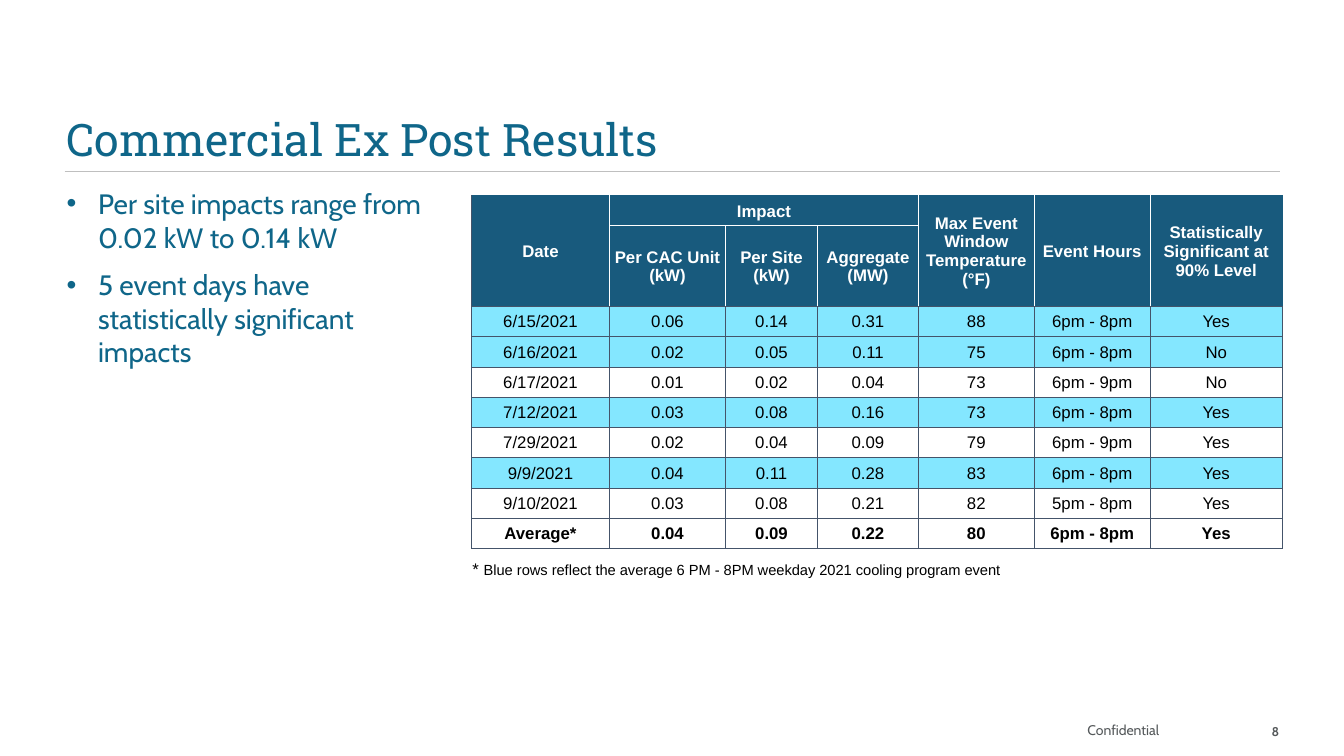
from itertools import product

from lxml.etree import SubElement
from pptx import Presentation
from pptx.dml.color import RGBColor
from pptx.enum.shapes import MSO_CONNECTOR
from pptx.enum.text import MSO_ANCHOR, MSO_AUTO_SIZE, PP_ALIGN
from pptx.oxml.ns import qn
from pptx.util import Pt

COLORS = {
    "title": "0F6689",
    "header": "185A7D",
    "event": "84E7FF",
    "white": "FFFFFF",
    "black": "000000",
    "grid": "44546A",
    "rule": "BFBFBF",
    "footer": "54585A",
}
COLUMN_WIDTHS = [98.6, 82.8, 65.8, 72, 82.8, 82.8, 94.3]
ROW_HEIGHT = 21.6
UNITS_ROW_HEIGHT = 57.6
HEADERS = [
    ["Date", "Impact", "", "", "Max Event Window Temperature (°F)",
     "Event Hours", "Statistically Significant at 90% Level"],
    ["", "Per CAC Unit (kW)", "Per Site (kW)", "Aggregate (MW)", "", "", ""],
]
RESULTS = [
    ["6/15/2021", "0.06", "0.14", "0.31", "88", "6pm - 8pm", "Yes"],
    ["6/16/2021", "0.02", "0.05", "0.11", "75", "6pm - 8pm", "No"],
    ["6/17/2021", "0.01", "0.02", "0.04", "73", "6pm - 9pm", "No"],
    ["7/12/2021", "0.03", "0.08", "0.16", "73", "6pm - 8pm", "Yes"],
    ["7/29/2021", "0.02", "0.04", "0.09", "79", "6pm - 9pm", "Yes"],
    ["9/9/2021", "0.04", "0.11", "0.28", "83", "6pm - 8pm", "Yes"],
    ["9/10/2021", "0.03", "0.08", "0.21", "82", "5pm - 8pm", "Yes"],
    ["Average*", "0.04", "0.09", "0.22", "80", "6pm - 8pm", "Yes"],
]
FOOTNOTE = "Blue rows reflect the average 6 PM - 8PM weekday 2021 cooling program event"
BULLETS = [
    "Per site impacts range from 0.02 kW to 0.14 kW",
    "5 event days have statistically significant impacts",
]


def color(name):
    return RGBColor.from_string(COLORS[name])


def style_font(font, family, size, color_name, bold=False):
    font.name = family
    font.size = Pt(size)
    font.bold = bold
    font.color.rgb = color(color_name)


def place(shape, box):
    shape.left, shape.top, shape.width, shape.height = [Pt(length) for length in box]


def set_frame(frame, insets, anchor):
    frame.word_wrap = True
    frame.auto_size = MSO_AUTO_SIZE.NONE
    frame.vertical_anchor = anchor
    (frame.margin_left, frame.margin_top,
     frame.margin_right, frame.margin_bottom) = [Pt(inset) for inset in insets]


def add_title(slide, box):
    title = slide.shapes.title
    place(title, box)
    frame = title.text_frame
    set_frame(frame, (0, 3.6, 108, 3.6), MSO_ANCHOR.BOTTOM)
    frame.text = "Commercial Ex Post Results"
    para = frame.paragraphs[0]
    para.alignment = PP_ALIGN.LEFT
    para.line_spacing = 0.9
    style_font(para.font, "Roboto Slab", 32, "title")

    left, top, width, height = box
    rule_y = Pt(top + height)
    rule = slide.shapes.add_connector(
        MSO_CONNECTOR.STRAIGHT, Pt(left - 1.4), rule_y, Pt(left + width + 2.2), rule_y)
    rule.line.color.rgb = color("rule")
    rule.line.width = Pt(1)
    SubElement(rule.element.spPr, qn("a:effectLst"))


def add_bullets(slide, box):
    body = slide.placeholders[1]
    place(body, box)
    frame = body.text_frame
    set_frame(frame, (0, 3.6, 7.2, 3.6), MSO_ANCHOR.TOP)
    frame.text = "\n".join(BULLETS)
    for index, para in enumerate(frame.paragraphs):
        para.space_before = Pt(10 if index else 0)
        properties = para._p.get_or_add_pPr()
        properties.set("marL", str(Pt(22.5)))
        properties.set("indent", str(Pt(-22.5)))
        SubElement(properties, qn("a:buFont"), typeface="Arial")
        SubElement(properties, qn("a:buChar"), char="•")
        style_font(para.font, "Cabin", 20, "title")


def set_borders(cell, sides):
    properties = cell._tc.get_or_add_tcPr()
    for side in "LRTB":
        line = SubElement(properties, qn(f"a:ln{side}"), w=str(Pt(0.5)))
        if side in sides:
            fill = SubElement(line, qn("a:solidFill"))
            SubElement(fill, qn("a:srgbClr"), val=COLORS[sides[side]])
        else:
            SubElement(line, qn("a:noFill"))


def format_cell(cell, text, sides, fill, font_color, bold=False):
    set_borders(cell, sides)
    if fill:
        cell.fill.solid()
        cell.fill.fore_color.rgb = color(fill)
    else:
        cell.fill.background()
    cell.margin_left = cell.margin_top = cell.margin_right = Pt(0.7)
    cell.margin_bottom = 0
    cell.vertical_anchor = MSO_ANCHOR.MIDDLE
    cell.text = text
    para = cell.text_frame.paragraphs[0]
    para.alignment = PP_ALIGN.CENTER
    style_font(para.font, "Arial", 12, font_color, bold)


def fill_headers(table):
    last = len(COLUMN_WIDTHS) - 1
    for row, column in product(range(2), range(last + 1)):
        units = 1 <= column <= 3
        sides = {
            "L": "white" if column else "grid",
            "R": "white" if column < last else "header",
            "T": "white" if row and units else "header",
            "B": "white" if units and not row else "grid",
        }
        format_cell(table.cell(row, column), HEADERS[row][column],
                    sides, "header", "white", True)
    table.cell(0, 1).merge(table.cell(0, 3))
    for column in (0, 4, 5, 6):
        table.cell(0, column).merge(table.cell(1, column))


def fill_results(table):
    sides = dict.fromkeys("LRTB", "grid")
    for row, values in enumerate(RESULTS, 2):
        average = values[0] == "Average*"
        blue = values[5] == "6pm - 8pm" and not average
        for column, value in enumerate(values):
            format_cell(table.cell(row, column), value, sides,
                        "event" if blue else "white", "black", average)


def fill_footnote(table):
    row = len(table.rows) - 1
    for column in range(len(COLUMN_WIDTHS)):
        format_cell(table.cell(row, column), "", {"T": "grid"}, None, "black")
    note = table.cell(row, 0)
    note.merge(table.cell(row, 4))
    note.vertical_anchor = MSO_ANCHOR.BOTTOM
    para = note.text_frame.paragraphs[0]
    para.alignment = PP_ALIGN.LEFT
    para.add_run().text = "* "
    span = para.add_run()
    span.text = FOOTNOTE
    span.font.size = Pt(10.5)


def add_results_table(slide, left, top):
    heights = [ROW_HEIGHT, UNITS_ROW_HEIGHT] + [ROW_HEIGHT] * (len(RESULTS) + 1)
    table = slide.shapes.add_table(
        len(heights), len(COLUMN_WIDTHS), Pt(left), Pt(top),
        Pt(sum(COLUMN_WIDTHS)), Pt(sum(heights))).table
    table.first_row = table.horz_banding = False
    for column, width in zip(table.columns, COLUMN_WIDTHS):
        column.width = Pt(width)
    for row, height in zip(table.rows, heights):
        row.height = Pt(height)
    fill_headers(table)
    fill_results(table)
    fill_footnote(table)


def add_footer(slide, box):
    left, top, width, height = box
    items = [
        ("Confidential", left, 92.9, 10, False, PP_ALIGN.LEFT),
        ("8", left + width - 41, 41, 9, True, PP_ALIGN.RIGHT),
    ]
    for text, item_left, item_width, size, bold, alignment in items:
        shape = slide.shapes.add_textbox(Pt(item_left), Pt(top), Pt(item_width), Pt(height))
        set_frame(shape.text_frame, (7.2, 3.6, 0, 3.6), MSO_ANCHOR.BOTTOM)
        shape.text_frame.text = text
        para = shape.text_frame.paragraphs[0]
        para.alignment = alignment
        style_font(para.font, "Cabin", size, "footer", bold)


def main():
    deck = Presentation()
    deck.slide_width, deck.slide_height = Pt(960), Pt(540)
    page = deck.slides.add_slide(deck.slide_layouts[1])
    add_title(page, (47.5, 50.4, 864.7, 72))
    add_bullets(page, (47.5, 129.6, 265.7, 349.9))
    add_results_table(page, 336.8, 139.7)
    add_footer(page, (769.7, 502.4, 144, 28.8))
    deck.save("out.pptx")


if __name__ == "__main__":
    main()
